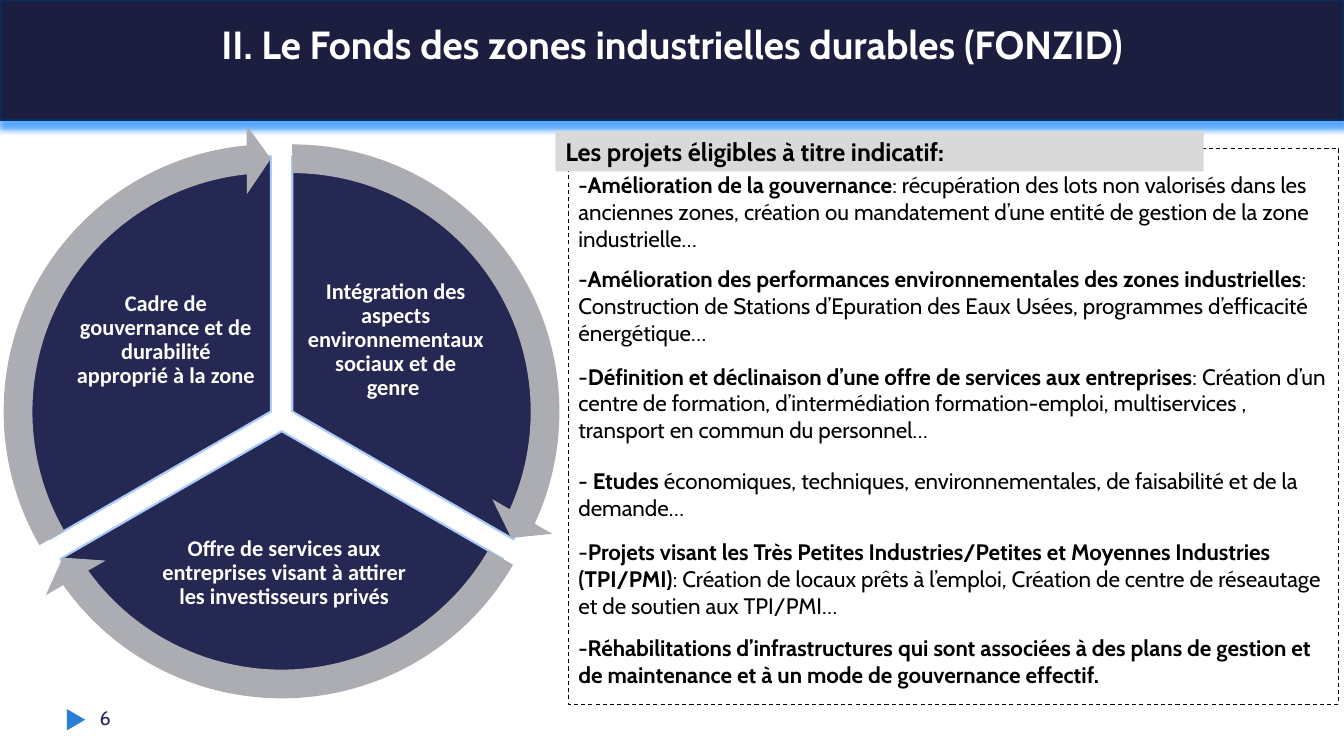
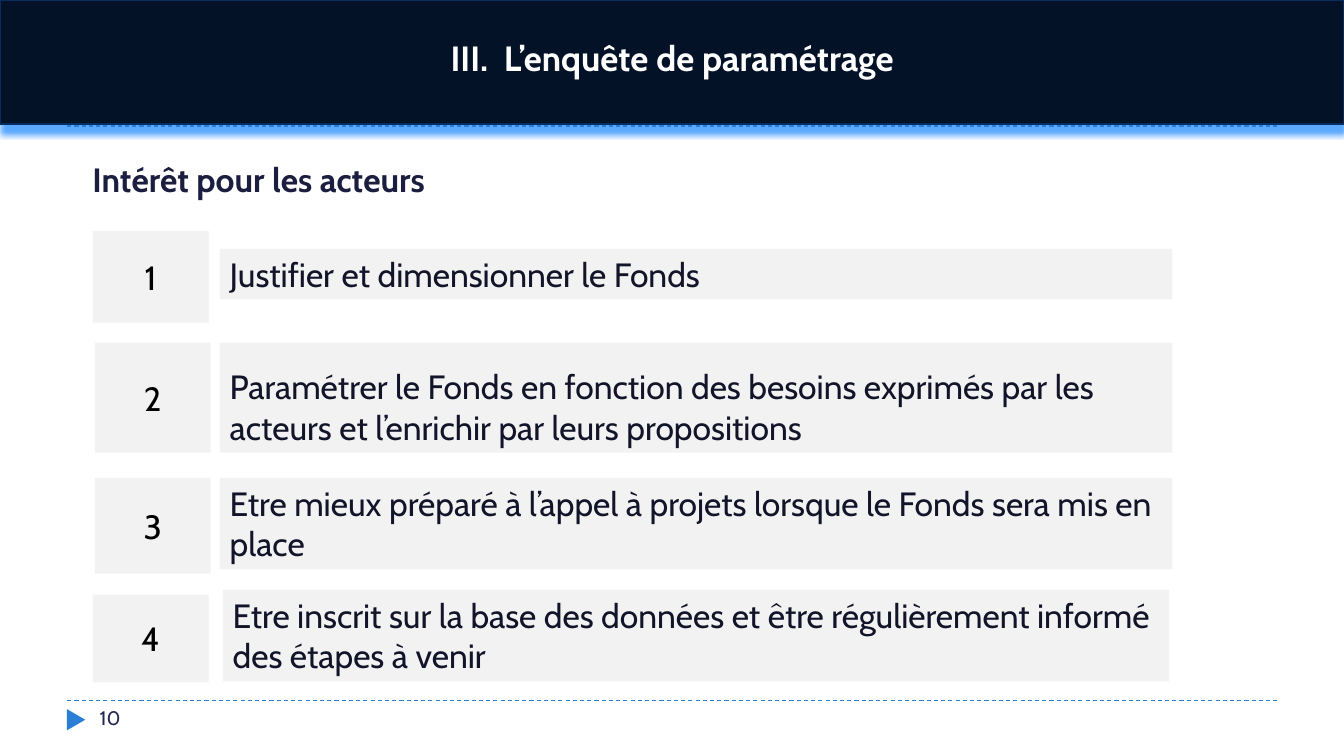
"""Build two slides on the industrial zones fund and its survey."""
from dataclasses import dataclass
from lxml.etree import SubElement
from pptx import Presentation
from pptx.dml.color import RGBColor
from pptx.enum.dml import MSO_LINE
from pptx.enum.shapes import MSO_CONNECTOR, MSO_SHAPE
from pptx.enum.text import MSO_ANCHOR, PP_ALIGN
from pptx.oxml.ns import qn
from pptx.util import Pt


@dataclass(frozen=True)
class Theme:
    font: str = "Cabin"
    wheel_font: str = "Calibri"
    navy: str = "242852"
    deep: str = "1B1E3E"
    night: str = "031227"
    ink: str = "121429"
    black: str = "000000"
    white: str = "FFFFFF"
    blue: str = "297FD5"
    edge: str = "072C62"
    glow: str = "5AA8FF"
    pale: str = "ACCBF9"
    ring: str = "ACADB3"
    label: str = "D9D9D9"
    panel: str = "F2F2F2"
    body: int = 16
    lead: int = 18
    large: int = 24
    small: int = 14


THEME = Theme()
WIDE, HIGH = 960, 540
CENTER, LEFT = PP_ALIGN.CENTER, PP_ALIGN.LEFT
TOP, MIDDLE, BOTTOM = MSO_ANCHOR.TOP, MSO_ANCHOR.MIDDLE, MSO_ANCHOR.BOTTOM

FUND = {"title": "II. Le Fonds des zones industrielles durables (FONZID)",
        "size": 28, "fill": THEME.deep, "height": 85.7, "pad": 37.4}
SURVEY = {"title": "III.  L’enquête de paramétrage",
          "size": 25, "fill": THEME.night, "height": 88.6, "pad": 32.6}

LABEL = "Les projets éligibles à titre indicatif: "
PROJECTS = [
    (0, [("-Amélioration de la gouvernance", True),
         (": récupération des lots non valorisés dans les anciennes zones, création ou "
          "mandatement d’une entité de gestion de la zone industrielle…", False)]),
    (9.7, [("-Amélioration des performances environnementales des zones industrielles", True),
           (": Construction de Stations d’Epuration des Eaux Usées, programmes "
            "d’efficacité énergétique…", False)]),
    (12.1, [("-", False),
            ("Définition et déclinaison d’une offre de services aux entreprises", True),
            (": Création d’un centre de formation, d’intermédiation formation-emploi, "
             "multiservices , transport en commun du personnel…", False)]),
    (17, [("- Etudes ", True),
          ("économiques, techniques, environnementales, de faisabilité et de la "
           "demande…", False)]),
    (12.7, [("-", False),
            ("Projets visant les Très Petites Industries/Petites et Moyennes Industries "
             "(TPI/PMI)", True),
            (": Création de locaux prêts à l’emploi, Création de centre de réseautage et "
             "de soutien aux TPI/PMI…", False)]),
    (10.9, [("-Réhabilitations d’infrastructures\u00a0qui sont associées à des plans de "
             "gestion et de maintenance et à un mode de gouvernance effectif.", True)]),
]

SECTORS = [
    ("Intégration des aspects environnementaux sociaux et de genre ",
     (208.8, 294), (218.2, 188.6, 128.9, 108.7)),
    ("Offre de services aux entreprises visant à attirer les investisseurs privés",
     (201.2, 308), (105.1, 361.4, 195.8, 95.8)),
    ("Cadre de gouvernance et de durabilité approprié à la zone",
     (193.5, 294), (53.3, 188.6, 130.3, 108.7)),
]

HEADING = "Intérêt pour les acteurs "
POINTS = [
    ("Justifier et dimensionner le Fonds",
     (66.2, 164.9, 82.8, 65.5), (157, 177.8, 680.4, 36), 3.6),
    ("Paramétrer le Fonds en fonction des besoins exprimés par les acteurs et "
     "l’enrichir par leurs propositions",
     (67.7, 244.8, 82.8, 78.5), (157, 244.8, 680.4, 78.5), 16.9),
    ("Etre mieux préparé à l’appel à projets lorsque le Fonds sera mis en place",
     (67.7, 341.3, 82.8, 68.4), (157, 341.3, 680.4, 65.5), 3.6),
    ("Etre inscrit sur la base des données et être régulièrement informé des étapes à venir",
     (66.2, 424.8, 82.8, 62.6), (159.1, 421.2, 676.1, 65.5), 3.6),
]


def rgb(code):
    return RGBColor.from_string(code)


def shape(slide, kind, box, fill=None, line=None, weight=0.75, adjust=()):
    item = slide.shapes.add_shape(kind, *map(Pt, box))
    item.shadow.inherit = False
    for pos, value in enumerate(adjust):
        item.adjustments[pos] = value
    if fill:
        item.fill.solid()
        item.fill.fore_color.rgb = rgb(fill)
    else:
        item.fill.background()
    if line:
        item.line.color.rgb = rgb(line)
        item.line.width = Pt(weight)
    else:
        item.line.fill.background()
    return item


def write(item, paras, size, color, align=LEFT, anchor=TOP, font=THEME.font,
          pads=(7.2, 3.6, 7.2, 3.6), pitch=None):
    frame = item.text_frame
    frame.word_wrap = True
    frame.vertical_anchor = anchor
    (frame.margin_left, frame.margin_top,
     frame.margin_right, frame.margin_bottom) = map(Pt, pads)
    for pos, (gap, runs) in enumerate(paras):
        para = frame.add_paragraph() if pos else frame.paragraphs[0]
        para.alignment = align
        para.space_before = Pt(gap)
        if pitch:
            para.line_spacing = pitch
        for words, bold in runs:
            run = para.add_run()
            run.text = words
            run.font.name = font
            run.font.size = Pt(size)
            run.font.bold = bold
            run.font.color.rgb = rgb(color)


def single(words, bold=False):
    return [(0, [(words, bold)])]


def note(slide, box, paras, *style, **more):
    write(slide.shapes.add_textbox(*map(Pt, box)), paras, *style, **more)


def band(slide, head):
    item = shape(slide, MSO_SHAPE.RECTANGLE, (0, 0, WIDE, head["height"]),
                 head["fill"], THEME.edge, 1.5)
    effects = item._element.spPr.find(qn("a:effectLst"))
    glow = SubElement(effects, qn("a:outerShdw"), blurRad=str(Pt(4)), dist=str(Pt(6)),
                      dir="5400000", algn="t", rotWithShape="0")
    SubElement(glow, qn("a:srgbClr"), val=THEME.glow)
    write(item, single(head["title"], True), head["size"], THEME.white, CENTER, BOTTOM,
          pads=(7.2, 3.6, 7.2, head["pad"]))


def rule(slide, y):
    line = slide.shapes.add_connector(MSO_CONNECTOR.STRAIGHT, Pt(48), Pt(y), Pt(912), Pt(y))
    line.line.color.rgb = rgb(THEME.blue)
    line.line.width = Pt(0.75)
    line.line.dash_style = MSO_LINE.DASH
    SubElement(line._element.spPr, qn("a:effectLst"))


def footer(slide, number):
    mark = shape(slide, MSO_SHAPE.ISOSCELES_TRIANGLE, (46.8, 507.6, 15.1, 13), THEME.blue)
    mark.rotation = 90
    note(slide, (64.1, 500.4, 208, 28.8), single(number), THEME.small, THEME.navy)


def disc(center, size):
    return center[0] - size / 2, center[1] - size / 2, size, size


def wheel(slide):
    spans = [((162 + 72 * pos) % 216, 18 + 72 * pos) for pos in range(len(SECTORS))]
    for (words, center, box), span in zip(SECTORS, spans):
        shape(slide, MSO_SHAPE.PIE, disc(center, 365), THEME.navy, THEME.pale, 1.5, span)
        note(slide, box, single(words, True), THEME.body, THEME.white, CENTER, MIDDLE,
             THEME.wheel_font, (1.44,) * 4, 0.9)
    for (_, center, _), (start, end) in zip(SECTORS, spans):
        shape(slide, MSO_SHAPE.CIRCULAR_ARROW, disc(center, 410.4), THEME.ring,
              adjust=(0.05, 3.28, end - 3.28, start, 0.06))


def fund(slide):
    band(slide, FUND)
    panel = shape(slide, MSO_SHAPE.RECTANGLE, (406.1, 105.8, 550.1, 397.4), line=THEME.black)
    panel.line.dash_style = MSO_LINE.DASH
    write(panel, PROJECTS, THEME.body, THEME.black, pads=(7.2, 16.3, 7.2, 3.6))
    label = shape(slide, MSO_SHAPE.RECTANGLE, (396.7, 93.6, 463, 28.8), THEME.label)
    write(label, single(LABEL, True), THEME.lead, THEME.black)
    wheel(slide)
    footer(slide, "6")


def survey(slide):
    band(slide, SURVEY)
    for y in (90, 500.4):
        rule(slide, y)
    note(slide, (59, 110.2, 480.2, 36), single(HEADING, True), THEME.large, THEME.deep)
    for pos, (words, tile, bar, pad) in enumerate(POINTS, 1):
        block = shape(slide, MSO_SHAPE.RECTANGLE, tile, THEME.panel)
        write(block, single(str(pos)), THEME.large, THEME.black, CENTER, MIDDLE)
        block = shape(slide, MSO_SHAPE.RECTANGLE, bar, THEME.panel)
        write(block, single(words), THEME.large, THEME.ink, pads=(7.2, pad, 7.2, 3.6))
    footer(slide, "10")


deck = Presentation()
deck.slide_width, deck.slide_height = Pt(WIDE), Pt(HIGH)
for build in (fund, survey):
    build(deck.slides.add_slide(deck.slide_layouts[6]))
deck.save("out.pptx")
